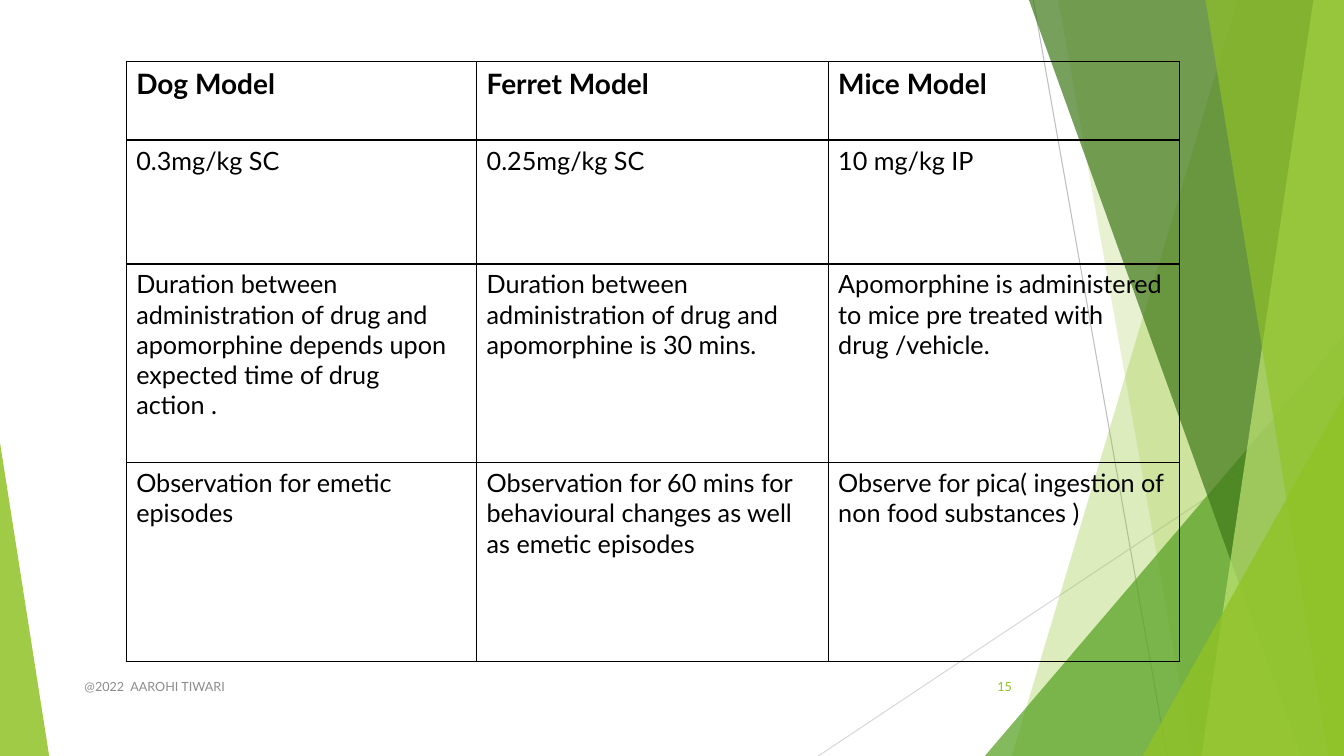
from lxml import etree
from pptx import Presentation
from pptx.dml.color import RGBColor
from pptx.enum.shapes import MSO_CONNECTOR, MSO_SHAPE
from pptx.enum.text import MSO_ANCHOR, PP_ALIGN
from pptx.oxml.ns import qn
from pptx.util import Cm, Pt

STRAIGHT = MSO_CONNECTOR.STRAIGHT
TRIANGLE = MSO_SHAPE.ISOSCELES_TRIANGLE
MIDDLE = MSO_ANCHOR.MIDDLE
LEFT, RIGHT = PP_ALIGN.LEFT, PP_ALIGN.RIGHT

COLORS = {
    "text": "000000",
    "footer": "8C8C8C",
    "leaf": "90C226",
    "grass": "54A021",
    "forest": "3F7819",
    "lime": "C0E474",
    "ray_dark": "BFBFBF",
    "ray_light": "D9D9D9",
}
FONT = "Lato"
PAGE_BOX = (0, 0, 33.87, 19.05)

RAYS = [
    ((26.04, 0), (29.41, 19.05), "ray_dark"),
    ((33.87, 10.24), (20.62, 19.05), "ray_light"),
]
FACETS = [
    ("band", (31.19, 25.5), "leaf", 30),
    ("band", (26.67, 30.05), "leaf", 20),
    ("corner", (24.82, 8.46), "grass", 72),
    ("band", (25.93, 32.79), "forest", 70),
    ("band", (33.1, 30.28), "lime", 70),
    ("band", (30.38, 33.48), "leaf", 65),
    ("corner", (28.8, 9.98), "leaf", 80),
]
LEFT_WEDGE = (1.24, 7.9)

COLUMN_WIDTHS = [8.83, 8.86, 8.86]
ROW_HEIGHTS = [1.98, 3.12, 5.01, 5.01]
MODELS = [
    ["Dog Model", "Ferret Model", "Mice Model"],
    ["0.3mg/kg SC", "0.25mg/kg SC", "10 mg/kg IP"],
    [
        "Duration between administration of drug and apomorphine depends upon "
        "expected time of drug action .",
        "Duration between administration of drug and apomorphine is 30 mins.",
        "Apomorphine is administered to mice pre treated with drug /vehicle.",
    ],
    [
        "Observation for emetic episodes",
        "Observation for 60 mins for behavioural changes as well as emetic episodes",
        "Observe for pica( ingestion of non food substances )",
    ],
]
HEADER_FORMAT = {"name": FONT, "size": Pt(20), "bold": True}
BODY_FORMAT = {"name": FONT, "size": Pt(18), "bold": False}
FOOTER_FORMAT = {"name": FONT, "size": Pt(9)}


def rgb(name):
    return RGBColor.from_string(COLORS[name])


def write(para, text, formats, color):
    span = para.add_run()
    span.text = text
    for name, value in formats.items():
        setattr(span.font, name, value)
    span.font.color.rgb = rgb(color)


def paint(shape, color, opacity):
    shape.shadow.inherit = False
    shape.line.fill.background()
    shape.fill.solid()
    shape.fill.fore_color.rgb = rgb(color)
    tint = shape.fill._xPr.find(qn("a:solidFill"))[0]
    etree.SubElement(tint, qn("a:alpha"), val=str(opacity * 1000))


def add_triangle(page, box, apex):
    triangle = page.shapes.add_shape(TRIANGLE, *(Cm(length) for length in box))
    triangle.adjustments[0] = apex
    return triangle


def add_band(page, box, top_x, bottom_x):
    left, top, width, height = box
    right, bottom = left + width, top + height
    points = [(right, top), (right, bottom), (left + bottom_x, bottom)]
    builder = page.shapes.build_freeform(Cm(left + top_x), Cm(top))
    builder.add_line_segments([(Cm(x), Cm(y)) for x, y in points], close=True)
    return builder.convert_to_shape()


def add_backdrop(page, box):
    left, top, width, height = box
    for start, end, color in RAYS:
        ray = page.shapes.add_connector(
            STRAIGHT,
            Cm(left + start[0]), Cm(top + start[1]),
            Cm(left + end[0]), Cm(top + end[1]),
        )
        ray.line.width = Pt(0.75)
        ray.line.color.rgb = rgb(color)
        etree.SubElement(ray._element.spPr, qn("a:effectLst"))
    for kind, (first, second), color, opacity in FACETS:
        if kind == "band":
            facet = add_band(page, box, first, second)
        else:
            corner = (left + first, top + second, width - first, height - second)
            facet = add_triangle(page, corner, 1)
        paint(facet, color, opacity)
    wedge_width, wedge_height = LEFT_WEDGE
    wedge = (left, top + height - wedge_height, wedge_width, wedge_height)
    paint(add_triangle(page, wedge, 0), "leaf", 85)


def add_borders(cell):
    properties = cell._tc.get_or_add_tcPr()
    for position, side in enumerate(("lnL", "lnR", "lnT", "lnB")):
        border = etree.Element(qn(f"a:{side}"), w=str(Pt(1)))
        solid = etree.SubElement(border, qn("a:solidFill"))
        etree.SubElement(solid, qn("a:srgbClr"), val=COLORS["text"])
        properties.insert(position, border)


def add_model_table(page, box):
    frame = page.shapes.add_table(
        len(MODELS), len(MODELS[0]), *(Cm(length) for length in box)
    )
    table = frame.table
    table.first_row = table.horz_banding = False
    for column, width in zip(table.columns, COLUMN_WIDTHS):
        column.width = Cm(width)
    for index, (row, height) in enumerate(zip(table.rows, ROW_HEIGHTS)):
        row.height = Cm(height)
        formats = BODY_FORMAT if index else HEADER_FORMAT
        for cell, text in zip(row.cells, MODELS[index]):
            cell.fill.background()
            add_borders(cell)
            write(cell.text_frame.paragraphs[0], text, formats, "text")


def add_footer_text(page, box, text, color, alignment):
    frame = page.shapes.add_textbox(*(Cm(length) for length in box)).text_frame
    frame.word_wrap = True
    frame.vertical_anchor = MIDDLE
    para = frame.paragraphs[0]
    para.alignment = alignment
    write(para, text, FOOTER_FORMAT, color)


def main():
    deck = Presentation()
    deck.slide_width, deck.slide_height = Cm(PAGE_BOX[2]), Cm(PAGE_BOX[3])
    page = deck.slides.add_slide(deck.slide_layouts[6])
    add_backdrop(page, PAGE_BOX)
    add_model_table(page, (3.18, 1.55, sum(COLUMN_WIDTHS), sum(ROW_HEIGHTS)))
    add_footer_text(
        page, (1.88, 16.79, 17.5, 1.02), "@2022  AAROHI TIWARI", "footer", LEFT
    )
    add_footer_text(page, (23.85, 16.79, 1.9, 1.02), "15", "leaf", RIGHT)
    deck.save("out.pptx")


if __name__ == "__main__":
    main()
